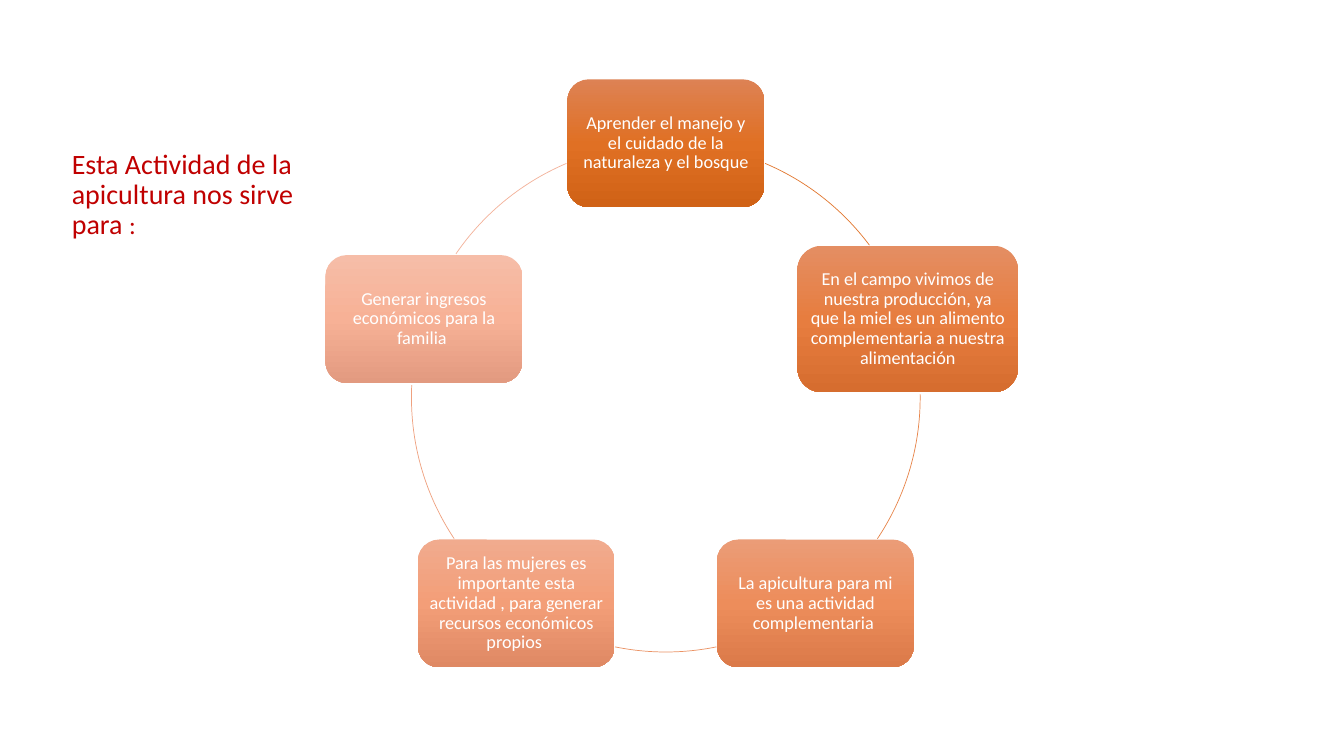
from copy import deepcopy
from dataclasses import dataclass
from math import cos, radians, sin

from pptx import Presentation
from pptx.dml.color import RGBColor as RGB
from pptx.enum.shapes import MSO_SHAPE as SHAPE
from pptx.enum.text import MSO_ANCHOR as ANCHOR, MSO_AUTO_SIZE as AUTO, PP_ALIGN as ALIGN
from pptx.oxml.ns import qn
from pptx.util import Cm, Pt


@dataclass(frozen=True)
class Theme:
    font: str = "Calibri"
    title_color: str = "C00000"
    step_color: str = "FFFFFF"
    title_size: int = 20
    colon_size: int = 18
    step_size: int = 13
    arc_width: float = 0.5
    gradients: tuple = (
        ("DD8254", "E07024", "D06216"),
        ("E48E63", "E77D3F", "D66D2F"),
        ("EB9C77", "ED8D5B", "DB7A49"),
        ("F1AB8E", "F39E78", "DF8964"),
        ("F6BDA8", "F7B196", "E29A80"),
    )
    arcs: tuple = ("E2772F", "E78449", "EB9264", "EFA17F", "F3B29A")


THEME = Theme()
CENTER_X, CENTER_Y, RADIUS = 16.78, 10.02, 6.41
NORMAL_BOX, LARGE_BOX = (4.96, 3.22), (5.56, 3.69)

STEPS = (
    ("Aprender el manejo y el cuidado de la naturaleza y el bosque", NORMAL_BOX),
    ("En el campo vivimos de nuestra producción, ya que la miel es un alimento "
     "complementaria a nuestra alimentación", LARGE_BOX),
    ("La apicultura para mi es una actividad complementaria ", NORMAL_BOX),
    ("Para las mujeres es importante esta actividad , para generar recursos "
     "económicos propios ", NORMAL_BOX),
    ("Generar ingresos económicos para la familia ", NORMAL_BOX),
)
ARC_ANGLES = ((293, 323.2), (359.2, 33.7), (78.5, 101.5), (146.3, 182.8), (214.4, 247))


def add_run(p, text, size, color):
    r = p.add_run()
    r.text = text
    r.font.name = THEME.font
    r.font.size = Pt(size)
    r.font.color.rgb = RGB.from_string(color)


def format_frame(tf, inset, align):
    tf.word_wrap = True
    tf.auto_size = AUTO.NONE
    tf.vertical_anchor = ANCHOR.MIDDLE
    tf.margin_left = tf.margin_right = tf.margin_top = tf.margin_bottom = Cm(inset)
    p = tf.paragraphs[0]
    p.alignment = align
    p.line_spacing = 0.9
    return p


def fill_gradient(sp, colors):
    sp.fill.gradient()
    sp.fill.gradient_angle = 270
    stops = sp.element.spPr.find(".//" + qn("a:gsLst"))
    stops.insert(1, deepcopy(stops[0]))
    for stop, position, color in zip(sp.fill.gradient_stops, (0, 0.5, 1), colors):
        stop.position = position
        stop.color.rgb = RGB.from_string(color)


def add_step(s, text, size, angle, colors):
    width, height = size
    x = CENTER_X + RADIUS * cos(radians(angle))
    y = CENTER_Y + RADIUS * sin(radians(angle))
    sp = s.shapes.add_shape(SHAPE.ROUNDED_RECTANGLE, Cm(x - width / 2),
                            Cm(y - height / 2), Cm(width), Cm(height))
    sp.shadow.inherit = False
    sp.line.fill.background()
    fill_gradient(sp, colors)
    p = format_frame(sp.text_frame, 0.13, ALIGN.CENTER)
    add_run(p, text, THEME.step_size, THEME.step_color)


def add_arc(s, start, end, color):
    sp = s.shapes.add_shape(SHAPE.ARC, Cm(CENTER_X - RADIUS), Cm(CENTER_Y - RADIUS),
                            Cm(2 * RADIUS), Cm(2 * RADIUS))
    sp.adjustments[0] = start * 0.6
    sp.adjustments[1] = end * 0.6
    sp.shadow.inherit = False
    sp.fill.background()
    sp.line.color.rgb = RGB.from_string(color)
    sp.line.width = Pt(THEME.arc_width)


def add_title(s):
    title = s.shapes.title
    title.left, title.top, title.width, title.height = Cm(1.63), Cm(3.35), Cm(6.91), Cm(3.15)
    p = format_frame(title.text_frame, 0.18, ALIGN.LEFT)
    add_run(p, "Esta Actividad de la apicultura nos sirve para ",
            THEME.title_size, THEME.title_color)
    add_run(p, ":", THEME.colon_size, THEME.title_color)


def main():
    prs = Presentation()
    prs.slide_width, prs.slide_height = Cm(33.87), Cm(19.05)
    s = prs.slides.add_slide(prs.slide_layouts[5])
    add_title(s)
    rows = zip(STEPS, ARC_ANGLES, THEME.gradients, THEME.arcs)
    for i, ((text, size), (start, end), gradient, arc_color) in enumerate(rows):
        add_step(s, text, size, -90 + i * 360 / len(STEPS), gradient)
        add_arc(s, start, end, arc_color)
    prs.save("out.pptx")


if __name__ == "__main__":
    main()
